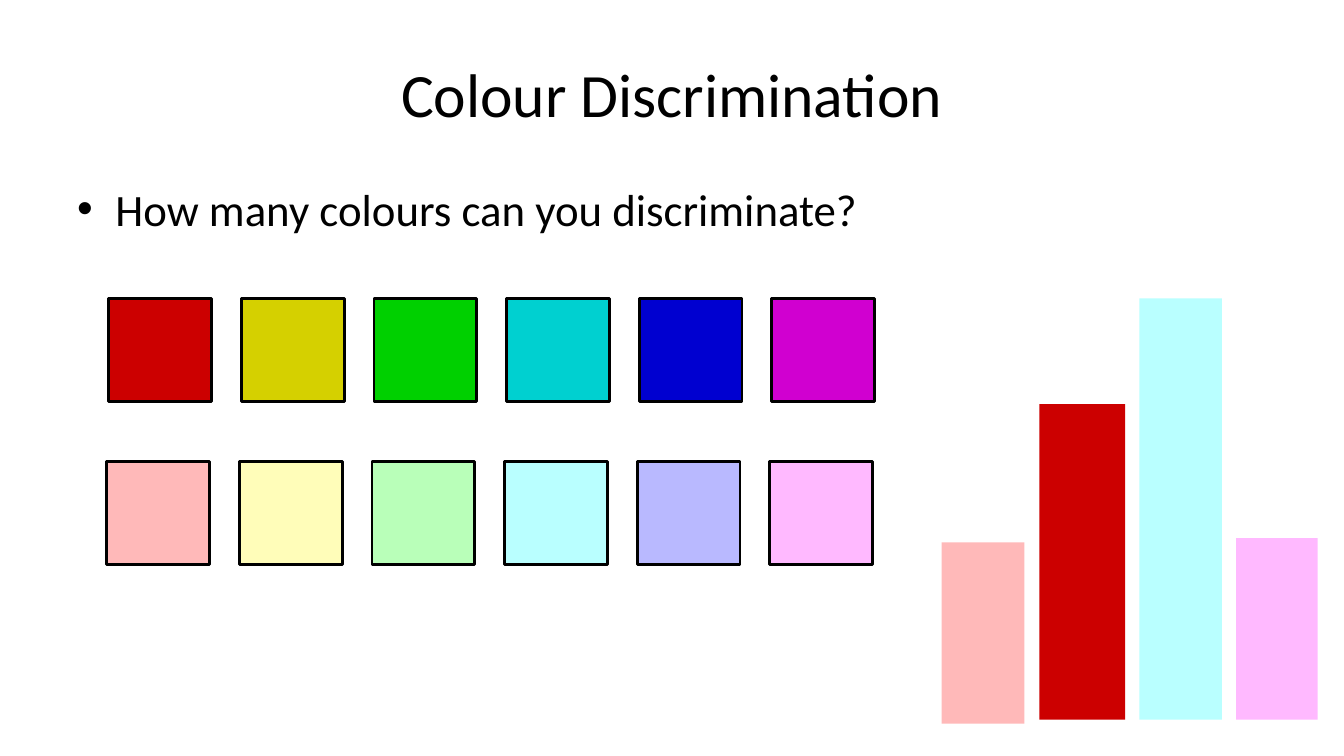
from dataclasses import dataclass

from lxml.etree import SubElement
from pptx import Presentation
from pptx.dml.color import RGBColor
from pptx.enum.shapes import MSO_SHAPE
from pptx.enum.text import MSO_ANCHOR, PP_ALIGN
from pptx.oxml.ns import qn
from pptx.util import Inches, Pt

WIDTH, HEIGHT = 13.33, 7.5


@dataclass(frozen=True)
class Theme:
    font: str = "Calibri"
    ink: str = "000000"
    title_size: int = 44
    body_size: int = 32
    outline: int = 2
    strong: tuple = ("CC0000", "D5D000", "00D000", "00D0D0", "0000D0", "D000D0")
    pale: tuple = ("FFB9B9", "FFFDB9", "B9FFB9", "B9FFFF", "B9B9FF", "FFB9FF")


THEME = Theme()

# Swatch grid: six columns, one row for each set of colours
SWATCH_SIDE = 1.02
COLUMN_STEP = 1.315
STRONG_ROW = (1.08, 2.96)
PALE_ROW = (1.06, 4.58)

# Bars: left, width, height, bottom and colour
BARS = (
    (9.34, 0.82, 1.8, 7.18, THEME.pale[0]),
    (10.31, 0.85, 3.13, 7.14, THEME.strong[0]),
    (11.3, 0.82, 4.18, 7.14, THEME.pale[3]),
    (12.26, 0.81, 1.8, 7.14, THEME.pale[5]),
)


def add_text(page, text, top, height, size, anchor=MSO_ANCHOR.TOP):
    """Add a text box across the page's margins and return its paragraph."""
    margin = WIDTH * 0.05
    box = page.shapes.add_textbox(Inches(margin), Inches(top),
                                  Inches(WIDTH - 2 * margin), Inches(height))
    frame = box.text_frame
    frame.word_wrap = True
    frame.vertical_anchor = anchor
    frame.text = text
    paragraph = frame.paragraphs[0]
    for span in paragraph.runs:
        span.font.name = THEME.font
        span.font.size = Pt(size)
        span.font.color.rgb = RGBColor.from_string(THEME.ink)
    return paragraph


def add_bullet(paragraph, indent):
    properties = paragraph._p.get_or_add_pPr()
    properties.set("marL", str(Inches(indent)))
    properties.set("indent", str(-Inches(indent)))
    SubElement(properties, qn("a:buFont"), typeface="Arial")
    SubElement(properties, qn("a:buChar"), char="•")


def add_block(shapes, left, top, width, height, colour, outlined=False):
    block = shapes.add_shape(MSO_SHAPE.RECTANGLE, Inches(left), Inches(top),
                             Inches(width), Inches(height))
    block.shadow.inherit = False
    block.fill.solid()
    block.fill.fore_color.rgb = RGBColor.from_string(colour)
    if outlined:
        block.line.color.rgb = RGBColor.from_string(THEME.ink)
        block.line.width = Pt(THEME.outline)
    else:
        block.line.fill.background()


def add_swatch_row(page, origin, colours):
    left, top = origin
    group = page.shapes.add_group_shape()
    for column, colour in enumerate(colours):
        add_block(group.shapes, left + column * COLUMN_STEP, top,
                  SWATCH_SIDE, SWATCH_SIDE, colour, outlined=True)


def add_bars(page):
    group = page.shapes.add_group_shape()
    for left, width, height, bottom, colour in BARS:
        add_block(group.shapes, left, bottom - height, width, height, colour)


def main():
    deck = Presentation()
    deck.slide_width, deck.slide_height = Inches(WIDTH), Inches(HEIGHT)
    page = deck.slides.add_slide(deck.slide_layouts[6])

    # Title and question
    title = add_text(page, "Colour Discrimination", HEIGHT * 0.04, HEIGHT / 6,
                     THEME.title_size, MSO_ANCHOR.MIDDLE)
    title.alignment = PP_ALIGN.CENTER
    question = add_text(page, "How many colours can you discriminate?",
                        1.75, HEIGHT * 0.66, THEME.body_size)
    add_bullet(question, 0.38)

    # Swatches and bars
    add_swatch_row(page, STRONG_ROW, THEME.strong)
    add_swatch_row(page, PALE_ROW, THEME.pale)
    add_bars(page)

    deck.save("out.pptx")


if __name__ == "__main__":
    main()
